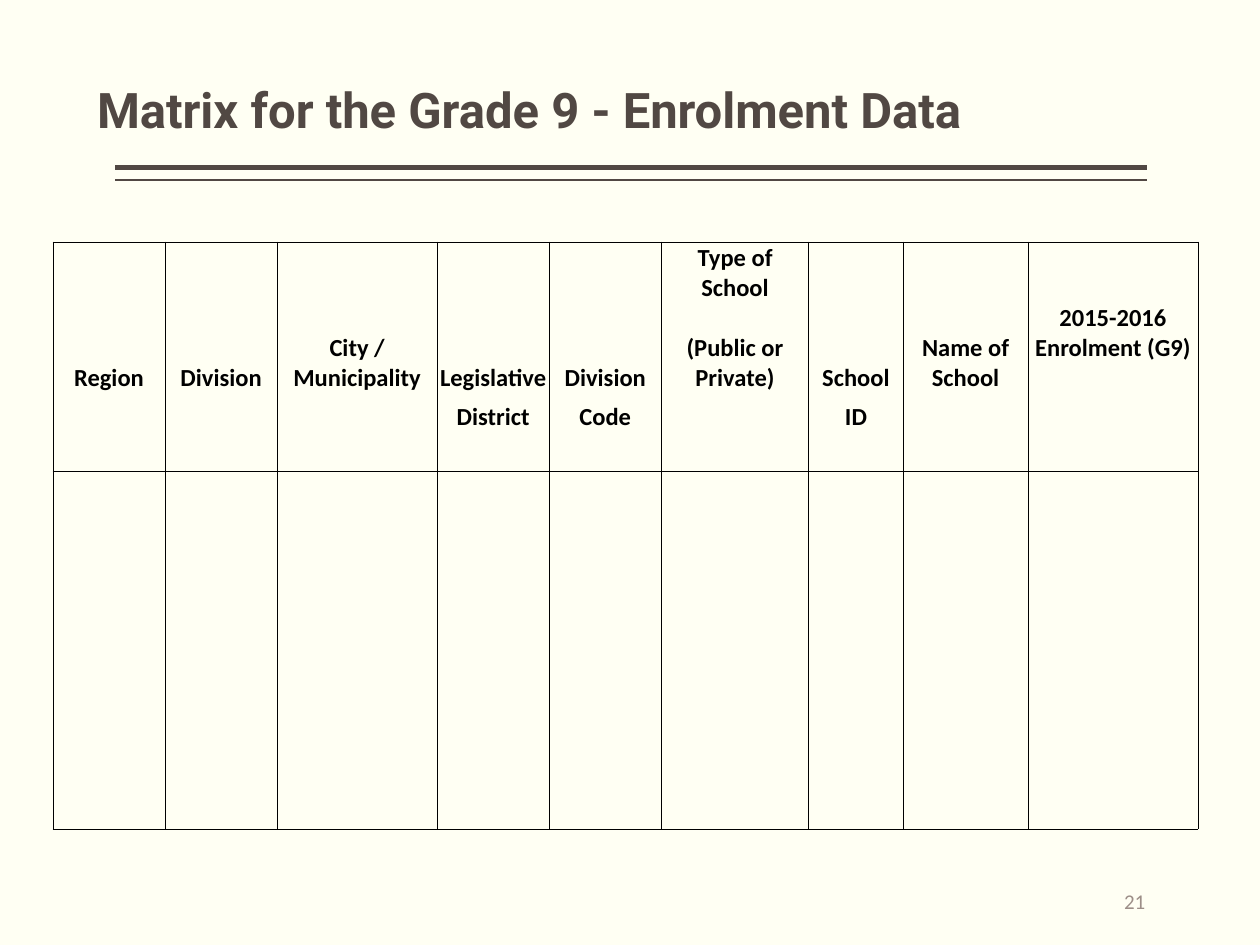
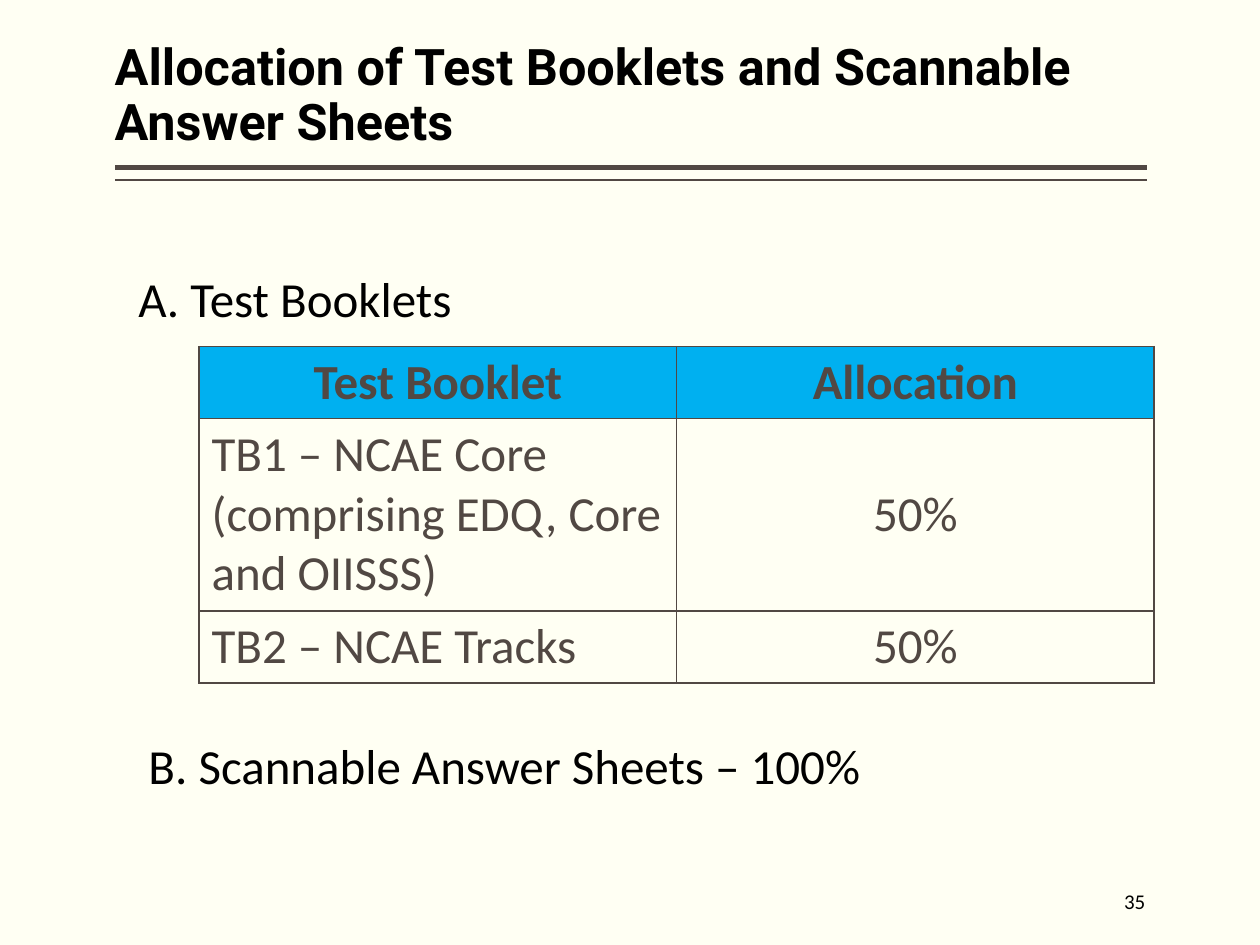
"""Builds two slides: the enrolment data matrix and the test booklet allocation."""
from dataclasses import dataclass

from lxml import etree
from pptx import Presentation
from pptx.dml.color import RGBColor
from pptx.enum import shapes, text
from pptx.oxml import ns
from pptx.util import Inches, Pt


@dataclass(frozen=True)
class Theme:
    page: str = "FFFFF3"
    brown: str = "514843"
    black: str = "000000"
    taupe: str = "9D8F88"
    blue: str = "00B0F0"
    title_font: str = "Roboto"
    body_font: str = "Calibri"
    body_size: float = 28
    matrix_size: float = 14
    number_size: float = 12


THEME = Theme()
LEFT, CENTER, RIGHT = text.PP_ALIGN.LEFT, text.PP_ALIGN.CENTER, text.PP_ALIGN.RIGHT
TOP, MIDDLE, BOTTOM = text.MSO_ANCHOR.TOP, text.MSO_ANCHOR.MIDDLE, text.MSO_ANCHOR.BOTTOM
RULES = [(1.33, 3), (1.43, 1)]
RULE_SPAN = (0.91, 9.1)
NUMBER_BOX = (7.59, 6.95, 1.5, 0.4)

MATRIX = {
    "title": "Matrix for the Grade 9 - Enrolment Data",
    "title_box": (0.67, 0.58, 9, 0.63),
    "title_size": 28,
    "title_color": THEME.brown,
    "title_anchor": MIDDLE,
    "title_inset": 0.1,
    "number": "21",
    "number_color": THEME.taupe,
    "origin": (0.42, 1.92),
    "columns": [0.89, 0.89, 1.27, 0.89, 0.89, 1.17, 0.75, 0.99, 0.69, 0.66],
    "rows": [0.48, 0.72, 0.31, 0.31, 2.84],
    "merged_rows": (1, 3, 4),
    "headings": [
        ["", "", "", "", "", "Type of School", "", "", "", ""],
        ["Region", "Division", "City / Municipality", "Legislative", "Division",
         "(Public or Private)", "School", "Name of School", "2015-2016 Enrolment (G9)", ""],
        ["", "", "", "District", "Code", "", "ID", "", "", ""],
        [""] * 10,
        [""] * 10,
    ],
}

ALLOCATION = {
    "title": "Allocation of Test Booklets and Scannable Answer Sheets",
    "title_box": (0.91, 0.3, 8.5, 0.95),
    "title_size": 28.8,
    "title_color": THEME.black,
    "title_anchor": BOTTOM,
    "title_inset": 0,
    "number": "35",
    "number_color": THEME.black,
    "origin": (1.58, 2.75),
    "columns": [3.79, 3.79],
    "rows": [0.57, 1.53, 0.57],
    "booklets": [
        ("Test Booklet", "Allocation"),
        ("TB1 – NCAE Core (comprising EDQ, Core and OIISSS)", "50%"),
        ("TB2 – NCAE Tracks", "50%"),
    ],
    "sections": [
        ("A. Test Booklets", (1, 2.08, 6.5, 0.57)),
        ("B. Scannable Answer Sheets – 100%", (1.08, 5.79, 7.42, 0.57)),
    ],
}


def assign(target, values):
    """Set each named attribute on the target."""
    for name, value in values.items():
        setattr(target, name, value)


def inches(values):
    """Convert plain numbers to lengths."""
    return [Inches(value) for value in values]


def insets(left, top, right, bottom):
    """Return the four margins as format values."""
    sides = ("margin_left", "margin_top", "margin_right", "margin_bottom")
    return dict(zip(sides, inches((left, top, right, bottom))))


def write(frame, words, size, color, font=THEME.body_font, bold=False, align=LEFT, spacing=1.0):
    """Write one formatted paragraph into a text frame."""
    paragraph = frame.paragraphs[0]
    assign(paragraph, {"alignment": align, "line_spacing": spacing})
    run = paragraph.add_run()
    run.text = words
    assign(run.font, {"name": font, "size": Pt(size), "bold": bold})
    run.font.color.rgb = RGBColor.from_string(color)


def add_label(slide, words, box, size, color, align=LEFT, **frame_values):
    """Add a wrapping text box."""
    frame = slide.shapes.add_textbox(*inches(box)).text_frame
    assign(frame, {"word_wrap": True, **frame_values})
    write(frame, words, size, color, align=align)


def start_slide(deck, content):
    """Add a slide with its title, double rule and number."""
    slide = deck.slides.add_slide(deck.slide_layouts.get_by_name("Title Only"))
    left, right = RULE_SPAN
    for height, weight in RULES:
        rule = slide.shapes.add_connector(
            shapes.MSO_CONNECTOR.STRAIGHT, *inches((right, height, left, height)))
        rule.line.color.rgb = RGBColor.from_string(THEME.brown)
        rule.line.width = Pt(weight)
        etree.SubElement(rule._element.spPr, ns.qn("a:effectLst"))
    title = slide.shapes.title
    assign(title, dict(zip(("left", "top", "width", "height"), inches(content["title_box"]))))
    inset = content["title_inset"]
    assign(title.text_frame, {
        "word_wrap": True, "auto_size": text.MSO_AUTO_SIZE.NONE,
        "vertical_anchor": content["title_anchor"], **insets(inset, 0.05, inset, 0.05)})
    write(title.text_frame, content["title"], content["title_size"], content["title_color"],
          THEME.title_font, bold=True, spacing=0.9)
    add_label(slide, content["number"], NUMBER_BOX, THEME.number_size, content["number_color"],
              RIGHT, vertical_anchor=MIDDLE, **insets(0, 0.05, 0, 0.05))
    return slide


def start_table(slide, content):
    """Add a plain table sized from its column and row lists."""
    columns, rows = content["columns"], content["rows"]
    table = slide.shapes.add_table(
        len(rows), len(columns), *inches((*content["origin"], sum(columns), sum(rows)))).table
    assign(table, {"first_row": False, "horz_banding": False})
    for column, width in zip(table.columns, columns):
        column.width = Inches(width)
    for row, height in zip(table.rows, rows):
        row.height = Inches(height)
    return table


def finish_cell(cell, sides, color, weight, fill=None):
    """Draw the named cell borders, then set the fill."""
    properties = cell._tc.get_or_add_tcPr()
    for side in "LRTB":
        border = etree.SubElement(properties, ns.qn(f"a:ln{side}"), w=str(Pt(weight)))
        if side in sides:
            paint = etree.SubElement(border, ns.qn("a:solidFill"))
            etree.SubElement(paint, ns.qn("a:srgbClr"), val=color)
        else:
            etree.SubElement(border, ns.qn("a:noFill"))
    if fill:
        cell.fill.solid()
        cell.fill.fore_color.rgb = RGBColor.from_string(fill)
    else:
        cell.fill.background()


def build_matrix(deck):
    """Build the enrolment matrix slide."""
    table = start_table(start_slide(deck, MATRIX), MATRIX)
    last = len(MATRIX["columns"]) - 1
    for r in MATRIX["merged_rows"]:
        table.cell(r, last - 1).merge(table.cell(r, last))
    for r, headings in enumerate(MATRIX["headings"]):
        for c, heading in enumerate(headings):
            cell = table.cell(r, c)
            enrolment = c == last - 1
            assign(cell, {"vertical_anchor": TOP if enrolment else BOTTOM,
                          **insets(0.01, 0.01, 0.01, 0)})
            if heading:
                write(cell.text_frame, heading, THEME.matrix_size, THEME.black,
                      bold=True, align=CENTER)
            else:
                ending = cell.text_frame.paragraphs[0]._p.get_or_add_endParaRPr()
                ending.set("sz", str(THEME.matrix_size * 100))
            sides = "" if c == last else "L"
            sides += "R" if not enrolment or cell.is_merge_origin else ""
            sides += {0: "T", 3: "B", 4: "TB"}.get(r, "")
            finish_cell(cell, sides, THEME.black, 0.5)


def build_allocation(deck):
    """Build the booklet allocation slide."""
    slide = start_slide(deck, ALLOCATION)
    table = start_table(slide, ALLOCATION)
    for r, booklet in enumerate(ALLOCATION["booklets"]):
        heading = r == 0
        for c, words in enumerate(booklet):
            cell = table.cell(r, c)
            cell.vertical_anchor = MIDDLE if c and not heading else TOP
            write(cell.text_frame, words, THEME.body_size, THEME.brown, bold=heading,
                  align=CENTER if heading or c else LEFT)
            finish_cell(cell, "LRTB", THEME.brown, 1, THEME.blue if heading else None)
    for words, box in ALLOCATION["sections"]:
        add_label(slide, words, box, THEME.body_size, THEME.black,
                  auto_size=text.MSO_AUTO_SIZE.SHAPE_TO_FIT_TEXT)


def main():
    """Build and save the deck."""
    deck = Presentation()
    assign(deck, {"slide_width": Inches(10), "slide_height": Inches(7.5)})
    backdrop = deck.slide_master.background.fill
    backdrop.solid()
    backdrop.fore_color.rgb = RGBColor.from_string(THEME.page)
    build_matrix(deck)
    build_allocation(deck)
    deck.save("out.pptx")


if __name__ == "__main__":
    main()
